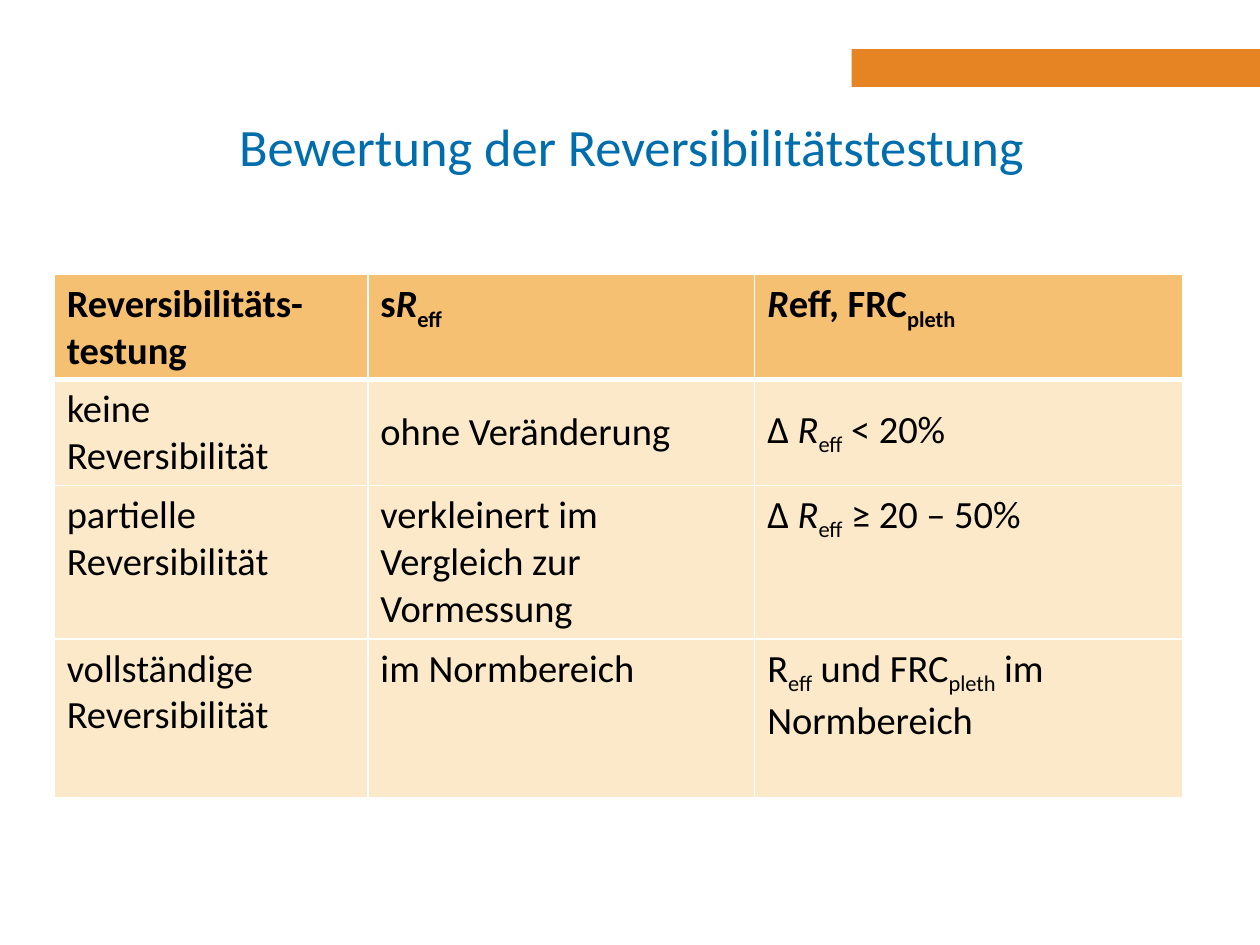
import dataclasses
import pptx
import pptx.dml.color
import pptx.enum.shapes
import pptx.enum.text
import pptx.oxml
import pptx.oxml.ns
import pptx.util

Inches = pptx.util.Inches
Pt = pptx.util.Pt
Anchor = pptx.enum.text.MSO_ANCHOR


@dataclasses.dataclass(frozen=True)
class Theme:
    font: str = "Calibri"
    title: str = "006EAC"
    text: str = "000000"
    bar: str = "E68323"
    head: str = "F5C071"
    body: str = "FBE9C9"
    rule: str = "FFFFFF"
    title_size: int = 30
    cell_size: int = 22


THEME = Theme()
COLS = (2.49, 3.07, 3.4)
ROWS = (0.83, 0.84, 1.22, 1.26)
# A run is its text and style: "i" italic, "_" subscript.
R, EFF, PLETH = ("R", "i"), ("eff", "_"), ("pleth", "_")
CELLS = (
    ([("Reversibilitäts-testung", "")],
     [("s", ""), R, EFF],
     [R, ("eff, FRC", ""), PLETH]),
    ([("keine Reversibilität", "")],
     [("ohne Veränderung", "")],
     [("Δ ", ""), R, EFF, (" < 20%", "")]),
    ([("partielle Reversibilität", "")],
     [("verkleinert im Vergleich zur Vormessung", "")],
     [("Δ ", ""), R, EFF, (" ≥ 20 – 50%", "")]),
    ([("vollständige Reversibilität", "")],
     [("im Normbereich", "")],
     [("R", ""), EFF, (" und FRC", ""), PLETH, (" im Normbereich", "")]),
)
MIDDLE = {(1, 1), (1, 2)}


def rgb(code):
    return pptx.dml.color.RGBColor.from_string(code)


def add_run(para, text, size, color, bold=False, style=""):
    run = para.add_run()
    run.text = text
    font = run.font
    font.name, font.size, font.bold = THEME.font, Pt(size), bold
    font.italic = style == "i"
    font.color.rgb = rgb(color)
    if style == "_":
        font._element.set("baseline", "-25000")


def add_bar(slide, box):
    bar = slide.shapes.add_shape(
        pptx.enum.shapes.MSO_SHAPE.RECTANGLE, *map(Inches, box))
    bar.shadow.inherit = False
    bar.fill.solid()
    bar.fill.fore_color.rgb = rgb(THEME.bar)
    bar.line.fill.background()


def add_title(slide, box, text):
    frame = slide.shapes.add_textbox(*map(Inches, box)).text_frame
    frame.word_wrap = True
    frame.vertical_anchor = Anchor.MIDDLE
    para = frame.paragraphs[0]
    para.alignment = pptx.enum.text.PP_ALIGN.CENTER
    add_run(para, text, THEME.title_size, THEME.title)


def set_edges(cell, widths):
    """Draw the cell's borders; widths maps L, R, T, B to points."""
    props = cell._tc.get_or_add_tcPr()
    space = pptx.oxml.ns.nsdecls("a")
    for spot, (side, width) in enumerate(widths.items()):
        props.insert(spot, pptx.oxml.parse_xml(
            f'<a:ln{side} {space} w="{Pt(width)}"><a:solidFill>'
            f'<a:srgbClr val="{THEME.rule}"/></a:solidFill></a:ln{side}>'))


def fill_cell(cell, runs, row, col):
    head = row == 0
    cell.fill.solid()
    cell.fill.fore_color.rgb = rgb(THEME.head if head else THEME.body)
    cell.vertical_anchor = Anchor.MIDDLE if (row, col) in MIDDLE else Anchor.TOP
    set_edges(cell, {"L": 1, "R": 1, "T": 3 if row == 1 else 1,
                     "B": 3 if head else 1})
    for text, style in runs:
        add_run(cell.text_frame.paragraphs[0], text,
                THEME.cell_size, THEME.text, head, style)


def add_grid(slide, left, top):
    table = slide.shapes.add_table(
        len(ROWS), len(COLS), Inches(left), Inches(top),
        Inches(sum(COLS)), Inches(sum(ROWS))).table
    for col, width in zip(table.columns, COLS):
        col.width = Inches(width)
    for row, height in zip(table.rows, ROWS):
        row.height = Inches(height)
    for row, line in enumerate(CELLS):
        for col, runs in enumerate(line):
            fill_cell(table.cell(row, col), runs, row, col)


def main():
    deck = pptx.Presentation()
    deck.slide_width, deck.slide_height = Inches(10), Inches(7.5)
    slide = deck.slides.add_slide(deck.slide_layouts[6])
    add_bar(slide, (6.76, 0.39, 3.24, 0.3))
    add_title(slide, (1.48, 0.69, 7.07, 0.93),
              "Bewertung der Reversibilitätstestung")
    add_grid(slide, 0.43, 2.18)
    deck.save("out.pptx")


if __name__ == "__main__":
    main()
